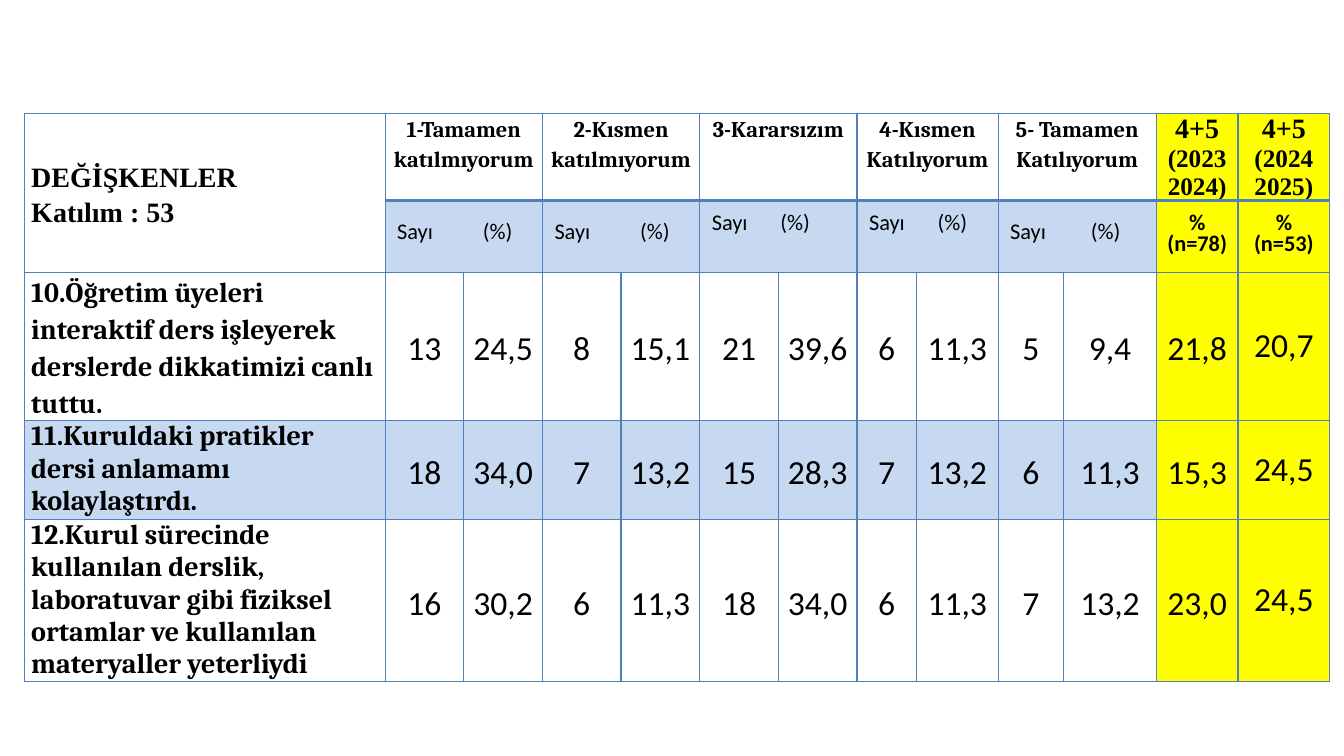
from lxml import etree
from pptx import Presentation, util as u
from pptx.dml.color import RGBColor
from pptx.enum import text
from pptx.oxml import ns

LINE, BAND, YELLOW, BLACK = "4F81BD", "C6D9F1", "FFFF00", "000000"
THIN, THICK = 1, 2.25
MIDDLE, TOP = text.MSO_ANCHOR.MIDDLE, text.MSO_ANCHOR.TOP
LEFT, CENTER = text.PP_ALIGN.LEFT, text.PP_ALIGN.CENTER


def rgb(value):
    return RGBColor.from_string(value)


def write(cell, lines, sizes, font, bold, align=CENTER, anchor=MIDDLE, spacing=1.15, tab=None):
    """Fill a cell with one paragraph per line; sizes pairs up with lines."""
    cell.vertical_anchor = anchor
    for i, (line, size) in enumerate(zip(lines, sizes)):
        frame = cell.text_frame
        paragraph = frame.paragraphs[0] if i == 0 else frame.add_paragraph()
        paragraph.text = line
        paragraph.alignment = align
        paragraph.line_spacing = spacing
        if tab:
            stops = etree.SubElement(paragraph._p.get_or_add_pPr(), ns.qn("a:tabLst"))
            etree.SubElement(stops, ns.qn("a:tab"), pos=str(u.Inches(tab)), algn="l")
        paragraph.font.name, paragraph.font.size = font, u.Pt(size)
        paragraph.font.bold = bold
        paragraph.font.color.rgb = rgb(BLACK)


deck = Presentation()
deck.slide_width, deck.slide_height = u.Inches(13.33), u.Inches(7.5)
slide = deck.slides.add_slide(deck.slide_layouts[6])

# Survey grid
widths = [3.58] + [0.78] * 6 + [0.59, 0.81, 0.65, 0.92, 0.81, 0.91]
heights = [0.86, 0.71, 1.47, 0.98, 1.61]
survey = slide.shapes.add_table(
    len(heights), len(widths), u.Inches(0.24), u.Inches(1.13),
    u.Inches(sum(widths)), u.Inches(sum(heights))).table
survey.first_row = survey.horz_banding = False
for column, width in zip(survey.columns, widths):
    column.width = u.Inches(width)
for row, height in zip(survey.rows, heights):
    row.height = u.Inches(height)

# Fills, margins and borders
for r in range(len(heights)):
    for c in range(len(widths)):
        cell = survey.cell(r, c)
        cell.margin_left = cell.margin_right = u.Inches(0.07)
        cell.margin_top = cell.margin_bottom = 0
        if c >= 11 or (r == 1 and c > 0) or r == 3:
            cell.fill.solid()
            cell.fill.fore_color.rgb = rgb(YELLOW if c >= 11 else BAND)
        else:
            cell.fill.background()
        edges = {"lnL": THIN, "lnR": THIN,
                 "lnT": THICK if r == 1 and c else THIN,
                 "lnB": THICK if r == 0 and c else THIN}
        for i, (edge, weight) in enumerate(edges.items()):
            border = etree.Element(ns.qn("a:" + edge), w=str(u.Pt(weight)))
            paint = etree.SubElement(border, ns.qn("a:solidFill"))
            etree.SubElement(paint, ns.qn("a:srgbClr"), val=LINE)
            cell._tc.get_or_add_tcPr().insert(i, border)

# Heading of the statements
survey.cell(0, 0).merge(survey.cell(1, 0))
write(survey.cell(0, 0), ["DEĞİŞKENLER", "Katılım : 53"], [20, 20],
      "Times New Roman", True, align=LEFT)

# Answer options: label, tab position of (%), lift of the subheading
options = [
    ("1-Tamamen katılmıyorum", 0.85, 0),
    ("2-Kısmen katılmıyorum", 0.85, 0),
    ("3-Kararsızım", 0.68, 0.18),
    ("4-Kısmen Katılıyorum", 0.68, 0.18),
    ("5- Tamamen Katılıyorum", 0.8, 0),
]
for i, (option, tab, lift) in enumerate(options):
    c = 1 + 2 * i
    for r in (0, 1):
        survey.cell(r, c).merge(survey.cell(r, c + 1))
    write(survey.cell(0, c), [option], [16], "Cambria", True, anchor=TOP)
    counts = survey.cell(1, c)
    counts.margin_left, counts.margin_bottom = u.Inches(0.12), u.Inches(lift)
    write(counts, ["Sayı\t(%)"], [16], "Calibri", False, align=LEFT,
          spacing=u.Pt(13), tab=tab)

# Yearly totals of options 4 and 5
years = [("(2023 2024)", "(n=78)"), ("(2024 2025)", "(n=53)")]
for c, (year, sample) in enumerate(years, 11):
    write(survey.cell(0, c), ["4+5", year], [20, 18], "Times New Roman", True,
          anchor=TOP, spacing=1.0)
    write(survey.cell(1, c), ["%", sample], [16, 16], "Calibri", True, spacing=u.Pt(15))

# Statements and results
statements = [
    ("10.Öğretim üyeleri interaktif ders işleyerek derslerde dikkatimizi canlı tuttu.", 1.15,
     "13 24,5 8 15,1 21 39,6 6 11,3 5 9,4 21,8 20,7"),
    ("11.Kuruldaki pratikler dersi anlamamı kolaylaştırdı.", 1.0,
     "18 34,0 7 13,2 15 28,3 7 13,2 6 11,3 15,3 24,5"),
    ("12.Kurul sürecinde kullanılan derslik, laboratuvar gibi fiziksel ortamlar "
     "ve kullanılan materyaller yeterliydi", 1.0,
     "16 30,2 6 11,3 18 34,0 6 11,3 7 13,2 23,0 24,5"),
]
for r, (statement, spacing, results) in enumerate(statements, 2):
    write(survey.cell(r, 0), [statement], [20], "Cambria", True,
          align=LEFT, anchor=TOP, spacing=spacing)
    for c, result in enumerate(results.split(), 1):
        write(survey.cell(r, c), [result], [24], "Calibri", False,
              spacing=1.0 if c == 12 else 1.15)

deck.save("out.pptx")
